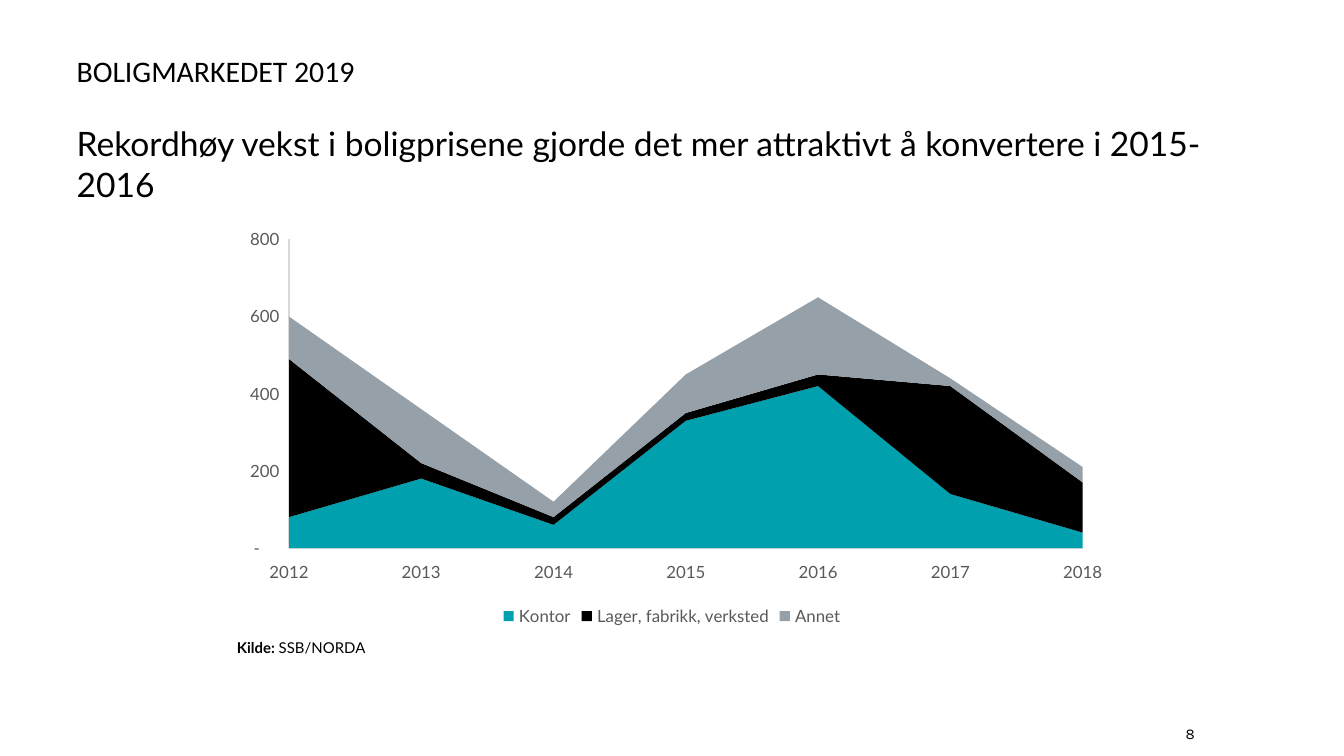
import pptx
import pptx.chart.data
import pptx.dml.color
import pptx.enum.chart
import pptx.enum.text
import pptx.util

# Widescreen slide, 16:9
SLIDE_WIDTH = 10
SLIDE_HEIGHT = SLIDE_WIDTH * 9 / 16
COLORS = {
    "text": "000000",
    "axis_text": "595959",
    "axis_line": "D9D9D9",
    "office": "00A0AF",
    "storage": "000000",
    "other": "95A0A9",
}
YEARS = [str(year) for year in range(2012, 2019)]
SERIES = [
    ("Kontor", "office", (80, 180, 60, 330, 420, 140, 40)),
    ("Lager, fabrikk, verksted", "storage", (410, 40, 20, 20, 30, 280, 130)),
    ("Annet", "other", (110, 140, 40, 100, 200, 20, 40)),
]
NUMBER_FORMAT = r'_-* #\ ##0_-;\-* #\ ##0_-;_-* "-"??_-;_-@_-'


def grid_box(left, top, width, height):
    """Turn percentages of the slide's size into lengths."""
    column, row = SLIDE_WIDTH / 100, SLIDE_HEIGHT / 100
    return [pptx.util.Inches(length) for length in
            (left * column, top * row, width * column, height * row)]


def rgb(name):
    return pptx.dml.color.RGBColor.from_string(COLORS[name])


def format_font(font, size, color="text", name="Lato"):
    font.name = name
    font.size = pptx.util.Pt(size)
    font.color.rgb = rgb(color)


def fill_text(shape, runs, size, name="Lato", alignment="LEFT", anchor="TOP", inset=True):
    """Write (text, bold) runs as the one paragraph of a shape."""
    frame = shape.text_frame
    frame.word_wrap = True
    frame.auto_size = pptx.enum.text.MSO_AUTO_SIZE.NONE
    frame.vertical_anchor = pptx.enum.text.MSO_ANCHOR[anchor]
    if not inset:
        frame.margin_left = frame.margin_right = 0
        frame.margin_top = frame.margin_bottom = 0
    paragraph = frame.paragraphs[0]
    paragraph.alignment = pptx.enum.text.PP_ALIGN[alignment]
    format_font(paragraph.font, size, name=name)
    for text, bold in runs:
        run = paragraph.add_run()
        run.text = text
        if bold:
            run.font.bold = True


def add_heading(slide, kicker_box, title_box):
    # Section name above the title
    kicker = slide.shapes.add_textbox(*kicker_box)
    fill_text(kicker, [("BOLIGMARKEDET 2019", False)], 16, name="Calibri",
              anchor="BOTTOM", inset=False)
    # Title placeholder
    title = slide.shapes.title
    title.left, title.top, title.width, title.height = title_box
    text = "Rekordhøy vekst i boligprisene gjorde det mer attraktivt å konvertere i 2015-2016"
    fill_text(title, [(text, False)], 18, inset=False)


def format_axis(axis):
    axis.major_tick_mark = pptx.enum.chart.XL_TICK_MARK.NONE
    axis.minor_tick_mark = pptx.enum.chart.XL_TICK_MARK.NONE
    axis.has_major_gridlines = False
    axis.format.line.color.rgb = rgb("axis_line")
    axis.format.line.width = pptx.util.Pt(0.75)
    format_font(axis.tick_labels.font, 9, "axis_text")


def add_area_chart(slide, box):
    data = pptx.chart.data.CategoryChartData(number_format=NUMBER_FORMAT)
    data.categories = YEARS
    for name, _, values in SERIES:
        data.add_series(name, values)
    chart = slide.shapes.add_chart(
        pptx.enum.chart.XL_CHART_TYPE.AREA_STACKED, *box, data).chart
    chart.has_title = False
    format_font(chart.font, 9)
    for series, (_, color, _) in zip(chart.plots[0].series, SERIES):
        series.format.fill.solid()
        series.format.fill.fore_color.rgb = rgb(color)
        series.format.line.fill.background()

    # Axes: areas start right on the value axis
    category_axis, value_axis = chart.category_axis, chart.value_axis
    format_axis(category_axis)
    category_axis.tick_label_position = pptx.enum.chart.XL_TICK_LABEL_POSITION.LOW
    format_axis(value_axis)
    value_axis.minimum_scale, value_axis.maximum_scale = 0, 800
    value_axis.major_unit = 200
    value_axis.tick_labels.number_format = NUMBER_FORMAT
    value_axis.tick_labels.number_format_is_linked = False
    for crossing in value_axis._element.xpath("c:crossBetween"):
        crossing.set("val", "midCat")

    # Legend
    chart.has_legend = True
    chart.legend.position = pptx.enum.chart.XL_LEGEND_POSITION.BOTTOM
    chart.legend.include_in_layout = False
    format_font(chart.legend.font, 9, "axis_text")


def add_notes_line(slide, source_box, number_box):
    # Data source below the chart
    source = slide.shapes.add_textbox(*source_box)
    fill_text(source, [("Kilde: ", True), ("SSB/NORDA", False)], 8)
    # Page number
    number = slide.shapes.add_textbox(*number_box)
    fill_text(number, [("8", False)], 8, name="Karla", alignment="RIGHT", inset=False)


def main():
    presentation = pptx.Presentation()
    presentation.slide_width = pptx.util.Inches(SLIDE_WIDTH)
    presentation.slide_height = pptx.util.Inches(SLIDE_HEIGHT)
    slide = presentation.slides.add_slide(
        presentation.slide_layouts.get_by_name("Title Only"))
    add_heading(slide, grid_box(5.7, 6.93, 86.2, 4.8), grid_box(5.7, 16.3, 86.2, 5.33))
    add_area_chart(slide, grid_box(16.64, 29.2, 66.7, 54.4))
    add_notes_line(slide, grid_box(16.64, 83.6, 69.1, 4.27), grid_box(85.7, 95.85, 3.2, 2.31))
    presentation.save("out.pptx")


if __name__ == "__main__":
    main()
